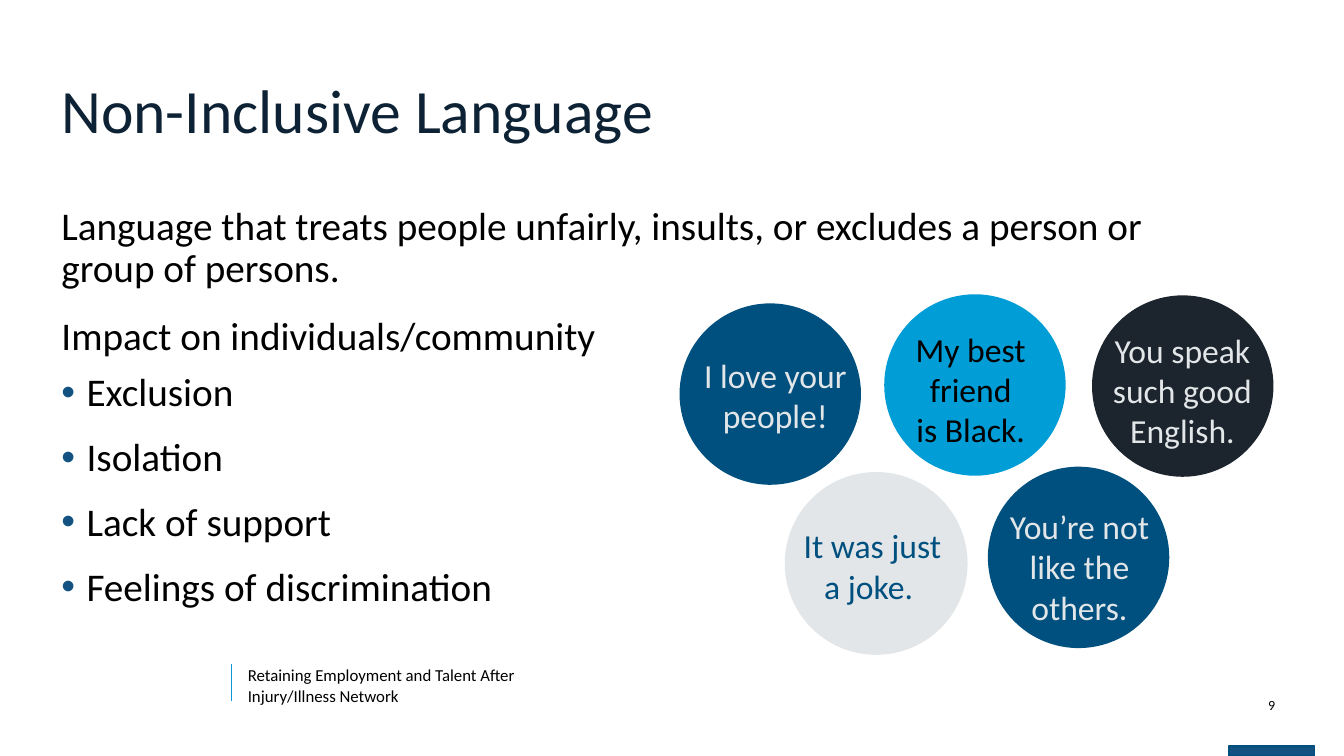
from lxml import etree
from pptx import Presentation, util as u
from pptx.dml.color import RGBColor
from pptx.enum import shapes, text
from pptx.oxml.ns import qn


class Theme:
    font = "Calibri"
    navy, blue, sky = "0D2335", "00507F", "009DD7"
    ink, pale, black = "1C252D", "E2E6E8", "000000"
    bar, rule = "135280", "0E97D8"
    title, body, quote, foot, page = 44, 28, 24, 12, 10


WIDE, HIGH = u.Inches(13.33), u.Inches(7.5)
BALL = (13.5, 24)

# circle spot, fill, text box, text colour, lines
QUOTES = [
    ((50.56, 40.13), Theme.blue, (47.94, 46.27, 19.5, 11.5), Theme.pale,
     ["I love your people!"]),
    ((65.79, 38.93), Theme.sky, (62.34, 42.8, 20.33, 17), Theme.black,
     ["My best ", "friend ", "is Black. "]),
    ((81.25, 39.07), Theme.ink, (80.18, 42.93, 15.6, 14.8), Theme.pale,
     ["You speak such good English."]),
    ((58.44, 62.53), Theme.pale, (58.2, 68.8, 13.43, 14.67), Theme.blue,
     ["It was just a joke. "]),
    ((73.5, 61.73), Theme.blue, (73.6, 66.27, 13.43, 14.67), Theme.pale,
     ["You’re not like the others."]),
]
LEADS = ["Language that treats people unfairly, insults, or excludes "
         "a person or group of persons.",
         "Impact on individuals/community"]
HARMS = ["Exclusion", "Isolation", "Lack of support",
         "Feelings of discrimination"]


def rgb(tone):
    return RGBColor.from_string(tone)


def area(*cells):
    """Turn columns and rows of a 100 by 100 grid into lengths."""
    return [int(c * (HIGH if i % 2 else WIDE) / 100)
            for i, c in enumerate(cells)]


def style(para, size, tone, align=text.PP_ALIGN.LEFT):
    para.alignment = align
    font = para.font
    font.name, font.size = Theme.font, u.Pt(size)
    font.color.rgb = rgb(tone)


def place(shape, *cells):
    shape.left, shape.top, shape.width, shape.height = area(*cells)
    return shape.text_frame


def solid(slide, kind, cells, fill, line=None):
    shape = slide.shapes.add_shape(kind, *area(*cells))
    shape.shadow.inherit = False
    shape.fill.solid()
    shape.fill.fore_color.rgb = rgb(fill)
    if line:
        shape.line.color.rgb = rgb(line)
        shape.line.width = u.Pt(1)
    else:
        shape.line.fill.background()


def label(slide, cells, lines, size, tone, align=text.PP_ALIGN.CENTER):
    frame = slide.shapes.add_textbox(*area(*cells)).text_frame
    frame.word_wrap = True
    frame.text = "\n".join(lines)
    for para in frame.paragraphs:
        style(para, size, tone, align)
    return frame


def shade(run):
    """Cast a soft shadow behind the letters of a run."""
    props = run.font._element
    effects = etree.SubElement(props, qn("a:effectLst"))
    cast = etree.SubElement(effects, qn("a:outerShdw"), blurRad="38100",
                            dist="38100", dir="2700000", algn="tl")
    tone = etree.SubElement(cast, qn("a:srgbClr"), val=Theme.black)
    etree.SubElement(tone, qn("a:alpha"), val="43000")


def bullet(para, mark):
    props = para._p.get_or_add_pPr()
    inset = u.Inches(0.25) if mark else 0
    props.set("marL", str(inset))
    props.set("indent", str(-inset))
    if mark:
        tint = etree.SubElement(props, qn("a:buClr"))
        etree.SubElement(tint, qn("a:srgbClr"), val=Theme.bar)
        etree.SubElement(props, qn("a:buFont"), typeface="Arial")
        etree.SubElement(props, qn("a:buChar"), char="•")
    else:
        etree.SubElement(props, qn("a:buNone"))


def head(slide):
    frame = place(slide.shapes.title, 3.82, 5.33, 89.33, 19.33)
    frame.text = "Non-Inclusive Language"
    frame.vertical_anchor = text.MSO_ANCHOR.MIDDLE
    frame.auto_size = text.MSO_AUTO_SIZE.NONE
    para = frame.paragraphs[0]
    para.line_spacing = 0.9
    style(para, Theme.title, Theme.navy)


def body(slide):
    frame = place(slide.placeholders[1], 3.82, 26.67, 89.33, 63.47)
    frame.text = "\n".join(LEADS + HARMS)
    frame.auto_size = text.MSO_AUTO_SIZE.NONE
    for i, para in enumerate(frame.paragraphs):
        harm = i >= len(LEADS)
        para.level = int(harm)
        bullet(para, harm)
        para.line_spacing = 0.9
        para.space_before = u.Pt(10 if harm else 18 * i)
        para.space_after = u.Pt(6 if harm else 0)
        style(para, Theme.body, Theme.black)


def quotes(slide):
    for spot, fill, cells, tone, lines in QUOTES:
        line = fill if fill == Theme.pale else None
        solid(slide, shapes.MSO_SHAPE.OVAL, spot + BALL, fill, line)
        frame = label(slide, cells, lines, Theme.quote, tone)
        if spot == QUOTES[0][0]:
            shade(frame.paragraphs[0].runs[0])


def foot(slide):
    rule = slide.shapes.add_connector(
        shapes.MSO_CONNECTOR.STRAIGHT, *area(17.25, 87.87, 17.25, 92.67))
    rule.line.color.rgb = rgb(Theme.rule)
    rule.line.width = u.Pt(0.5)
    etree.SubElement(rule._element.spPr, qn("a:effectLst"))
    label(slide, (17.7, 87.33, 22.28, 6.67),
          ["Retaining Employment and Talent After Injury/Illness Network"],
          Theme.foot, Theme.black, text.PP_ALIGN.LEFT)
    solid(slide, shapes.MSO_SHAPE.RECTANGLE, (91.43, 98.67, 6.37, 1.33),
          Theme.bar, Theme.blue)
    label(slide, (91.43, 91.47, 6.37, 3.6), ["9"], Theme.page, Theme.black)


def main():
    deck = Presentation()
    deck.slide_width, deck.slide_height = WIDE, HIGH
    slide = deck.slides.add_slide(deck.slide_layouts[1])
    foot(slide)
    head(slide)
    body(slide)
    quotes(slide)
    deck.save("out.pptx")


if __name__ == "__main__":
    main()
